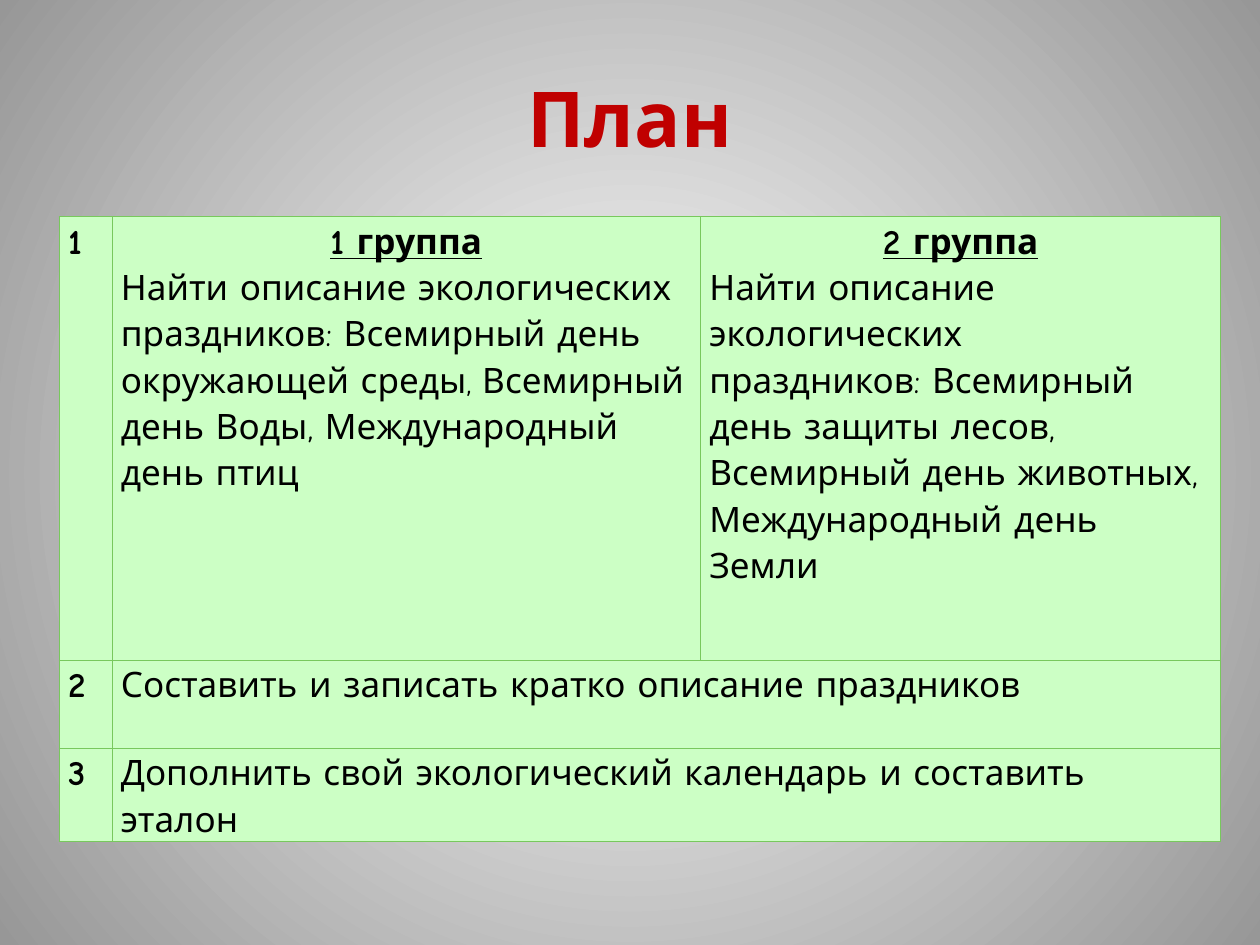
from dataclasses import dataclass

from lxml import etree
from pptx import Presentation
from pptx.dml.color import RGBColor
from pptx.enum.text import MSO_ANCHOR, PP_ALIGN
from pptx.oxml.ns import qn
from pptx.util import Inches, Pt

LEFT, MID = PP_ALIGN.LEFT, PP_ALIGN.CENTER
TOP, CENTER = MSO_ANCHOR.TOP, MSO_ANCHOR.MIDDLE


@dataclass(frozen=True)
class Theme:
    font: str = "Comic Neue"
    glow: str = "FFFFFF"
    edge: str = "979797"
    title: str = "C00000"
    ink: str = "000000"
    cell: str = "CCFFC5"
    rule: str = "78C85D"
    head: float = 44
    body: float = 20
    small: float = 18
    line: float = 0.75
    space: float = 1.15


@dataclass(frozen=True)
class Line:
    text: str
    bold: bool = False
    under: bool = False
    align: PP_ALIGN = LEFT
    after: float = 0


@dataclass(frozen=True)
class Entry:
    row: int
    col: int
    lines: tuple
    span: int = 1


THEME = Theme()
COLS = (0.42, 4.67, 4.13)
ROWS = (3.52, 0.7, 0.7)
SMALL = ", "  # this separator is set smaller in the first group's list
FIND = Line("Найти описание экологических")


def group(num: int) -> Line:
    return Line(f"{num} группа", bold=True, under=True, align=MID)


ENTRIES = [Entry(i, 0, (Line(str(i + 1), bold=True),)) for i in range(len(ROWS))] + [
    Entry(0, 1, (
        group(1), FIND,
        Line("праздников: Всемирный день окружающей среды|, |"
             "Всемирный день Воды, Международный день птиц", after=10))),
    Entry(0, 2, (
        group(2), FIND,
        Line("праздников: Всемирный день защиты лесов, Всемирный день животных,"),
        Line("Международный день Земли"))),
    Entry(1, 1, (Line("Составить и записать кратко описание праздников"),), span=2),
    Entry(2, 1, (Line("Дополнить свой экологический календарь и составить эталон"),),
          span=2),
]


def style(run, size: float, color: str, bold: bool, under: bool = False) -> None:
    font = run.font
    font.name, font.size, font.bold = THEME.font, Pt(size), bold
    font.underline = under
    font.color.rgb = RGBColor.from_string(color)


def paint_back(slide) -> None:
    fill = slide.background.fill
    fill.gradient()
    for stop, color in zip(fill.gradient_stops, (THEME.glow, THEME.edge)):
        stop.color.rgb = RGBColor.from_string(color)
    # Turn the linear gradient into a circle from the centre
    grad = next(slide._element.iter(qn("a:gradFill")))
    for lin in grad.findall(qn("a:lin")):
        grad.remove(lin)
    ring = etree.SubElement(grad, qn("a:path"), {"path": "circle"})
    etree.SubElement(ring, qn("a:fillToRect"), dict.fromkeys("ltrb", "50000"))


def draw_title(slide, text: str) -> None:
    title = slide.shapes.title
    title.left, title.top = Inches(0.5), Inches(0.3)
    title.width, title.height = Inches(9), Inches(1.25)
    frame = title.text_frame
    frame.text = text
    frame.vertical_anchor = CENTER
    para = frame.paragraphs[0]
    para.alignment = MID
    style(para.runs[0], THEME.head, THEME.title, True)


def frame_cell(cell) -> None:
    cell.margin_left = cell.margin_right = Inches(0.07)
    cell.margin_top = cell.margin_bottom = 0
    cell.vertical_anchor = TOP
    props = cell._tc.get_or_add_tcPr()
    for side in "LRTB":
        edge = etree.SubElement(props, qn(f"a:ln{side}"), w=str(Pt(THEME.line)))
        solid = etree.SubElement(edge, qn("a:solidFill"))
        etree.SubElement(solid, qn("a:srgbClr"), val=THEME.rule)
    cell.fill.solid()
    cell.fill.fore_color.rgb = RGBColor.from_string(THEME.cell)


def fill_cell(cell, lines: tuple) -> None:
    frame = cell.text_frame
    for i, line in enumerate(lines):
        para = frame.add_paragraph() if i else frame.paragraphs[0]
        para.alignment, para.line_spacing = line.align, THEME.space
        para.space_after = Pt(line.after)
        for part in line.text.split("|"):
            run = para.add_run()
            run.text = part
            size = THEME.small if part == SMALL else THEME.body
            style(run, size, THEME.ink, line.bold, line.under)


def draw_table(slide) -> None:
    table = slide.shapes.add_table(
        len(ROWS), len(COLS), Inches(0.47), Inches(1.72),
        Inches(sum(COLS)), Inches(sum(ROWS))).table
    table.first_row = table.horz_banding = False
    for col, width in zip(table.columns, COLS):
        col.width = Inches(width)
    for row, height in zip(table.rows, ROWS):
        row.height = Inches(height)
    for cell in table.iter_cells():
        frame_cell(cell)
    for item in ENTRIES:
        cell = table.cell(item.row, item.col)
        if item.span > 1:
            cell.merge(table.cell(item.row, item.col + item.span - 1))
        fill_cell(cell, item.lines)


def main() -> None:
    deck = Presentation()
    deck.slide_width, deck.slide_height = Inches(10), Inches(7.5)
    slide = deck.slides.add_slide(deck.slide_layouts.get_by_name("Title Only"))
    paint_back(slide)
    draw_title(slide, "План")
    draw_table(slide)
    deck.save("out.pptx")


if __name__ == "__main__":
    main()
